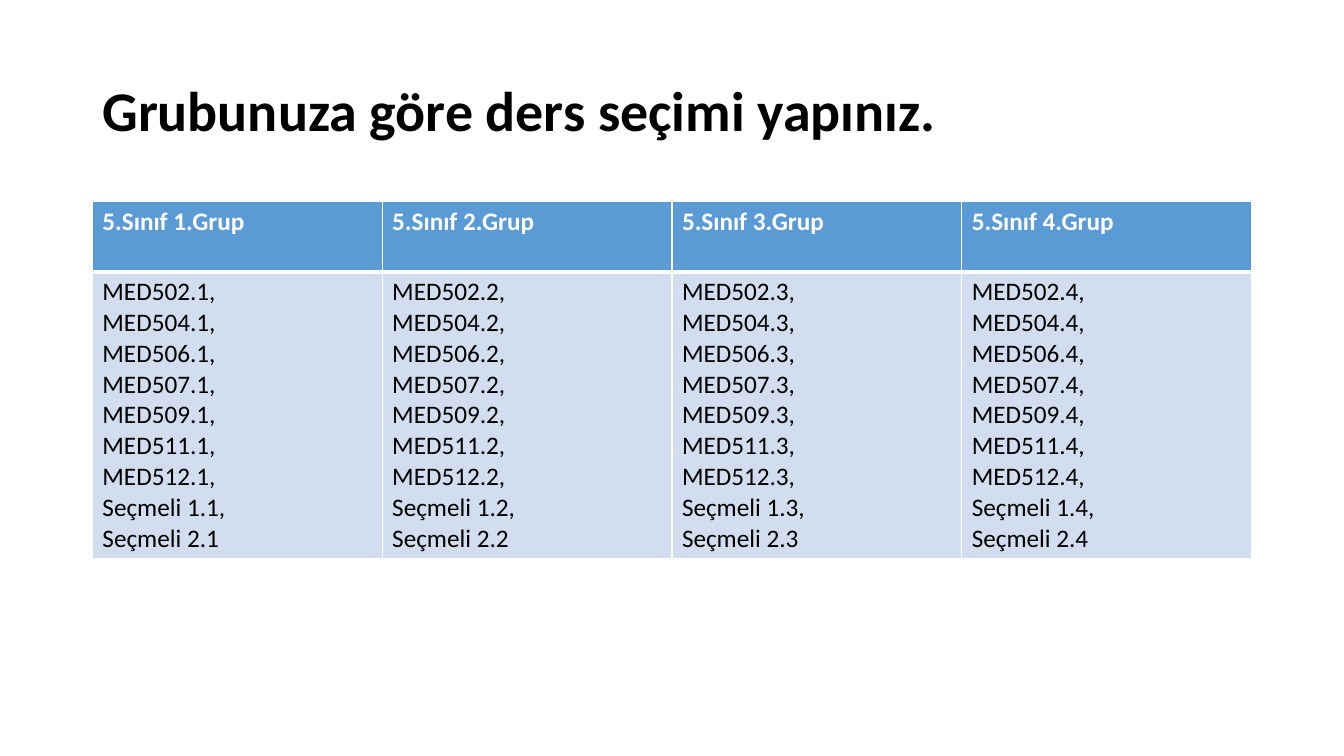
from lxml import etree
from pptx import Presentation
from pptx import util as u
from pptx.dml.color import RGBColor
from pptx.enum import text
from pptx.oxml.ns import qn

PX = 9525
COLORS = {"black": "000000", "white": "FFFFFF", "header": "5B9BD5", "body": "D2DEEF"}
FONT = "Calibri"
GROUPS = range(1, 5)
COURSES = ["MED502", "MED504", "MED506", "MED507", "MED509", "MED511", "MED512",
           "Seçmeli 1", "Seçmeli 2"]


def px(n):
    return u.Emu(n * PX)


def rgb(name):
    return RGBColor.from_string(COLORS[name])


def format_runs(tf, size, color, bold):
    for p in tf.paragraphs:
        p.alignment = text.PP_ALIGN.LEFT
        for r in p.runs:
            r.font.name = FONT
            r.font.size = u.Pt(size)
            r.font.bold = bold
            r.font.color.rgb = rgb(color)


def set_borders(cell, top, bottom):
    """Draw white cell borders; top and bottom widths are in points."""
    widths = {"lnL": 1, "lnR": 1, "lnT": top, "lnB": bottom}
    tc_pr = cell._tc.get_or_add_tcPr()
    for i, (tag, width) in enumerate(widths.items()):
        ln = etree.Element(qn(f"a:{tag}"), w=str(u.Pt(width)))
        fill = etree.SubElement(ln, qn("a:solidFill"))
        etree.SubElement(fill, qn("a:srgbClr"), val=COLORS["white"])
        tc_pr.insert(i, ln)


def fill_cell(cell, content, fill, color, bold, top, bottom):
    cell.text_frame.text = content
    format_runs(cell.text_frame, 18, color, bold)
    cell.fill.solid()
    cell.fill.fore_color.rgb = rgb(fill)
    set_borders(cell, top, bottom)


def add_title(s, content):
    sp = s.shapes.title
    sp.left, sp.top, sp.width, sp.height = px(88), px(38), px(1104), px(139)
    tf = sp.text_frame
    tf.text = content
    tf.word_wrap = True
    tf.vertical_anchor = text.MSO_ANCHOR.MIDDLE
    tf.paragraphs[0].line_spacing = 0.9
    format_runs(tf, 40, "black", True)


def add_group_table(s):
    table = s.shapes.add_table(2, len(GROUPS), px(88), px(192), px(1104), px(340)).table
    table.rows[0].height = px(67)
    table.rows[1].height = px(273)
    for col, group in enumerate(GROUPS):
        courses = ",\n".join(f"{course}.{group}" for course in COURSES)
        fill_cell(table.cell(0, col), f"5.Sınıf {group}.Grup", "header", "white", True, 1, 3)
        fill_cell(table.cell(1, col), courses, "body", "black", False, 3, 1)


def main():
    prs = Presentation()
    prs.slide_width, prs.slide_height = px(1280), px(720)
    s = prs.slides.add_slide(prs.slide_layouts[5])
    add_title(s, "Grubunuza göre ders seçimi yapınız.")
    add_group_table(s)
    prs.save("out.pptx")


if __name__ == "__main__":
    main()
